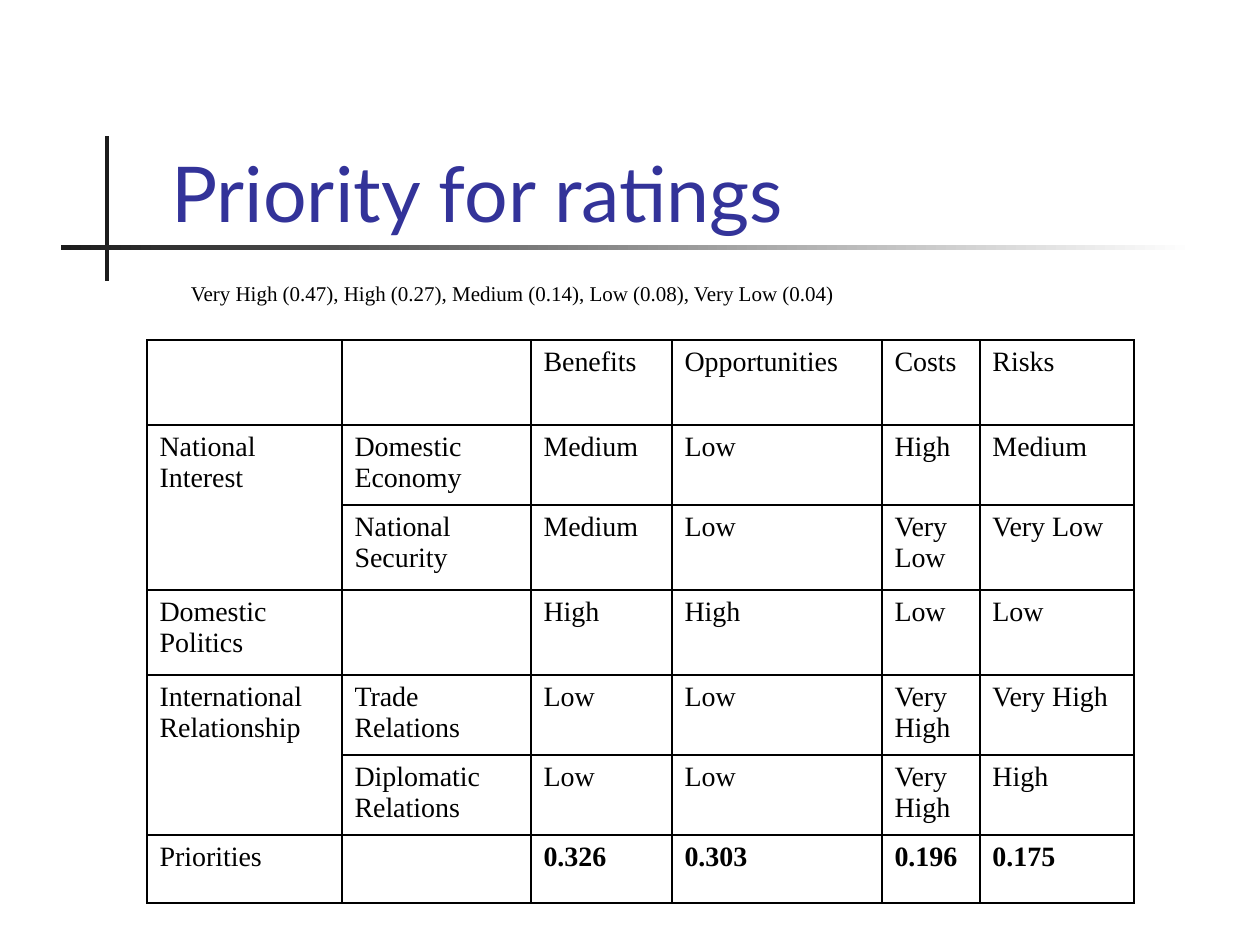
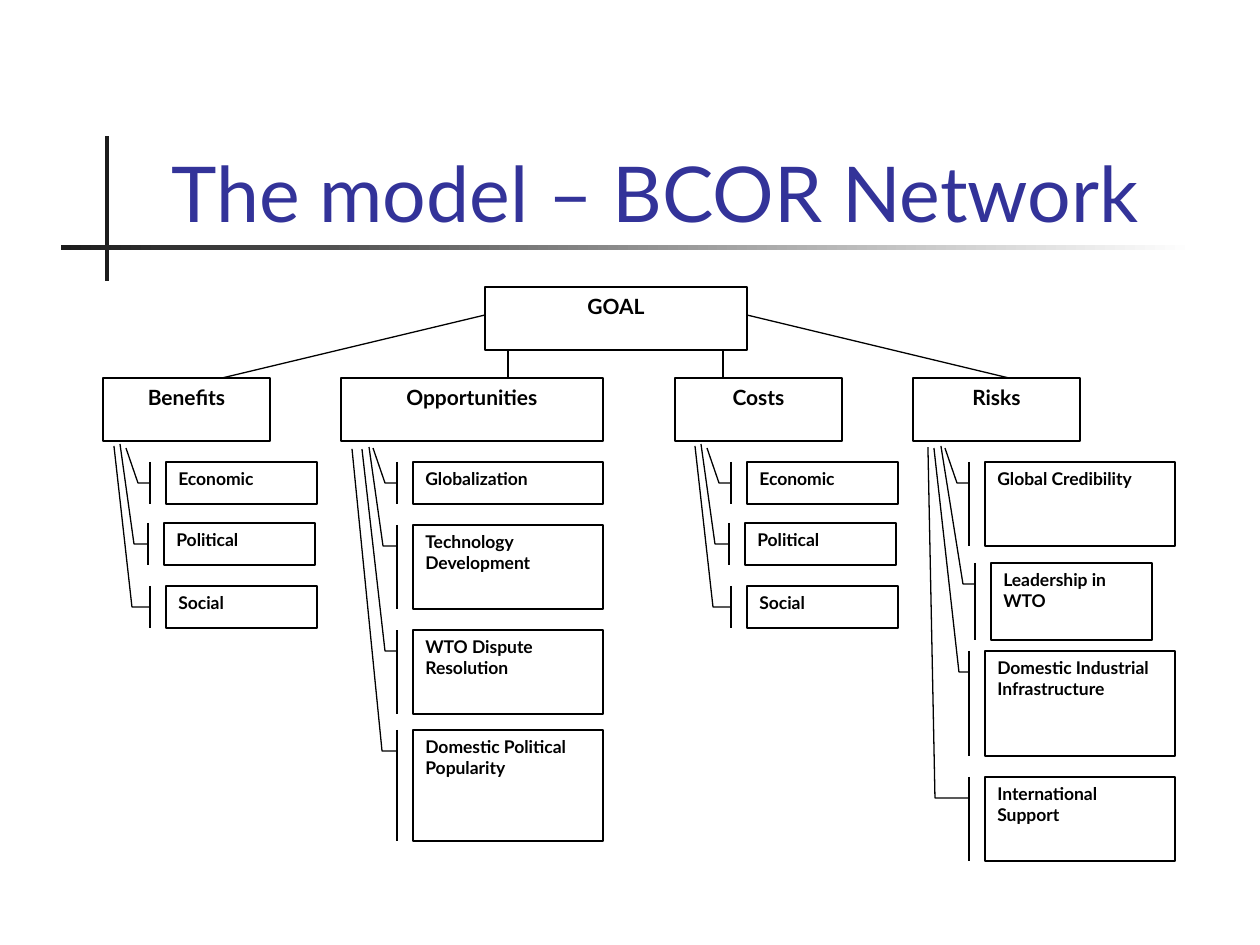
from lxml import etree
from pptx import Presentation
from pptx import util as u
from pptx.dml import color
from pptx.enum import shapes, text
from pptx.oxml import ns

COLORS = {"ink": "000000", "paper": "FFFFFF", "bar": "1C1C1C", "title": "333399"}
SANS, SERIF = "Lato", "Times New Roman"
LEFT, CENTER, JUSTIFY = text.PP_ALIGN.LEFT, text.PP_ALIGN.CENTER, text.PP_ALIGN.JUSTIFY
TOP, MIDDLE, BOTTOM = text.MSO_ANCHOR.TOP, text.MSO_ANCHOR.MIDDLE, text.MSO_ANCHOR.BOTTOM

RATINGS = [
    ["", "", "Benefits", "Opportunities", "Costs", "Risks"],
    ["National Interest", "Domestic Economy", "Medium", "Low", "High", "Medium"],
    ["", "National Security", "Medium", "Low", "Very Low", "Very Low"],
    ["Domestic Politics", "", "High", "High", "Low", "Low"],
    ["International Relationship", "Trade Relations", "Low", "Low", "Very High", "Very High"],
    ["", "Diplomatic Relations", "Low", "Low", "Very High", "High"],
    ["Priorities", "", "0.326", "0.303", "0.196", "0.175"],
]
COL_WIDTHS = [195, 189, 141, 210, 98, 154]
ROW_HEIGHTS = [85, 80, 85, 85, 80, 80, 68]

# Each factor: label, box relative to its header, bend dx, tip dx, tip dy.
SOCIETY = [
    ("Economic", (0, 84, 151, 42), -28, -40, -14),
    ("Political", (-2, 145, 151, 42), -30, -44, -79),
    ("Social", (0, 208, 151, 42), -34, -52, -140),
]
OPPORTUNITIES = [
    ("Globalization", (0, 84, 190, 42), -28, -40, -14),
    ("Technology Development", (0, 147, 190, 84), -30, -44, -78),
    ("WTO Dispute Resolution", (0, 252, 190, 84), -28, -51, -181),
    ("Domestic Political Popularity", (0, 352, 190, 111), -31, -61, -281),
]
RISKS = [
    ("Global Credibility", (0, 84, 190, 84), -28, -40, -14),
    ("Leadership in WTO", (6, 185, 161, 77), -28, -50, -117),
    ("Domestic Industrial Infrastructure", (0, 273, 190, 105), -26, -51, -203),
    ("International Support", (0, 399, 190, 84), -50, -57, -330),
]


def px(*lengths):
    """Turn px into EMU, at 126 px to the inch."""
    return [u.Emu(round(n * 914400 / 126)) for n in lengths]


def rgb(name):
    """Look up a named colour."""
    return color.RGBColor.from_string(COLORS[name])


def write(tf, words, size=12, font=SANS, ink="ink", bold=False, align=LEFT, anchor=TOP, wrap=True):
    """Put one formatted paragraph into a text frame."""
    tf.word_wrap = wrap
    tf.vertical_anchor = anchor
    p = tf.paragraphs[0]
    p.alignment = align
    r = p.add_run()
    r.text = words
    r.font.size, r.font.name, r.font.bold = u.Pt(size), font, bold
    r.font.color.rgb = rgb(ink)


def add_box(s, box, words="", kind=shapes.MSO_SHAPE.RECTANGLE, fill="paper", line="ink", **fmt):
    """Add a flat preset shape, with text if any."""
    sp = s.shapes.add_shape(kind, *px(*box))
    sp.shadow.inherit = False
    sp.fill.solid()
    sp.fill.fore_color.rgb = rgb(fill)
    if line:
        sp.line.color.rgb = rgb(line)
        sp.line.width = u.Pt(0.75)
    else:
        sp.line.fill.background()
    if words:
        write(sp.text_frame, words, **fmt)
    return sp


def add_text(s, box, words, **fmt):
    """Add a text box."""
    sp = s.shapes.add_textbox(*px(*box))
    write(sp.text_frame, words, **fmt)
    return sp


def add_line(s, x1, y1, x2, y2):
    """Add a thin straight connector."""
    c = s.shapes.add_connector(shapes.MSO_CONNECTOR.STRAIGHT, *px(x1, y1, x2, y2))
    c.line.color.rgb = rgb("ink")
    c.line.width = u.Pt(0.75)
    etree.SubElement(c._element.spPr, ns.qn("a:effectLst"))


def add_titled_slide(prs, title):
    """Add a blank slide with the crossed bars and a title."""
    s = prs.slides.add_slide(prs.slide_layouts[6])
    add_box(s, (105, 136, 4, 145), fill="bar", line=None)
    rule = add_box(s, (61, 245, 1134, 5), line=None)
    rule.fill.gradient()
    rule.fill.gradient_angle = 0
    for stop, name, position in zip(rule.fill.gradient_stops, ("bar", "paper"), (0, 1)):
        stop.color.rgb = rgb(name)
        stop.position = position
    add_text(s, (159, 86, 1074, 158), title, size=44, ink="title", anchor=BOTTOM)
    return s


def set_borders(cell, hidden=""):
    """Draw the four cell borders except the hidden sides."""
    tcPr = cell._tc.get_or_add_tcPr()
    for i, side in enumerate("LRTB"):
        ln = etree.Element(ns.qn("a:ln" + side), w=str(u.Pt(1)))
        if side in hidden:
            etree.SubElement(ln, ns.qn("a:noFill"))
        else:
            fill = etree.SubElement(ln, ns.qn("a:solidFill"))
            etree.SubElement(fill, ns.qn("a:srgbClr"), val=COLORS["ink"])
        tcPr.insert(i, ln)


def add_ratings_table(s, x, y):
    """Add the ratings table with its top left corner at x, y."""
    size = px(x, y, sum(COL_WIDTHS), sum(ROW_HEIGHTS))
    table = s.shapes.add_table(len(RATINGS), len(COL_WIDTHS), *size).table
    table.first_row = table.horz_banding = False
    for col, width in zip(table.columns, px(*COL_WIDTHS)):
        col.width = width
    for row, height in zip(table.rows, px(*ROW_HEIGHTS)):
        row.height = height
    hidden = {(1, 0): "B", (2, 0): "T"}
    for i, row in enumerate(RATINGS):
        for j, words in enumerate(row):
            cell = table.cell(i, j)
            cell.fill.background()
            set_borders(cell, hidden.get((i, j), ""))
            if words:
                bold = i == len(RATINGS) - 1 and j > 1
                write(cell.text_frame, words, size=16, font=SERIF, bold=bold, align=JUSTIFY)
    table.cell(4, 0).merge(table.cell(5, 0))


def add_factor(s, box, words, bend, tip_x, tip_y):
    """Add a factor box with an accent bar and a bent leader to its header."""
    w, h = box[2:]
    sp = add_box(s, box, words, kind=shapes.MSO_SHAPE.LINE_CALLOUT_2_BORDER_AND_ACCENT_BAR,
                 size=10, bold=True)
    leader = [(-16, 21), (bend, 21), (tip_x, tip_y)]
    for i, (dx, dy) in enumerate(leader):
        sp.adjustments[2 * i] = dy / h
        sp.adjustments[2 * i + 1] = dx / w


def add_branch(s, x, y, width, name, indent, factors):
    """Add a header at x, y and its factors below."""
    add_box(s, (x, y, width, 63), name, bold=True, align=CENTER)
    for words, (dx, dy, w, h), *leader in factors:
        add_factor(s, (x + indent + dx, y + dy, w, h), words, *leader)


def ratings_slide(prs):
    """Build the slide with the rating scale and table."""
    s = add_titled_slide(prs, "Priority for ratings")
    scale = "Very High (0.47), High (0.27), Medium (0.14), Low (0.08), Very Low (0.04)"
    sp = add_text(s, (157, 274, 711, 38), scale, font=SERIF, align=CENTER, anchor=MIDDLE, wrap=False)
    sp.text_frame.auto_size = text.MSO_AUTO_SIZE.SHAPE_TO_FIT_TEXT
    add_ratings_table(s, 147, 340)


def network_slide(prs):
    """Build the slide with the goal and its four branches."""
    s = add_titled_slide(prs, "The model – BCOR Network")
    x, y, w, h = goal = 485, 287, 262, 63
    top = 378
    for x1, y1, x2 in ((508, y + h // 2, 508), (723, y + h // 2, 723),
                       (x, 315, 222), (x + w, 315, 1009)):
        add_line(s, x1, y1, x2, top)
    add_branch(s, 103, top, 167, "Benefits", 63, SOCIETY)
    add_branch(s, 341, top, 262, "Opportunities", 72, OPPORTUNITIES)
    add_branch(s, 675, top, 167, "Costs", 72, SOCIETY)
    add_branch(s, 913, top, 167, "Risks", 72, RISKS)
    add_box(s, goal, "GOAL", bold=True, align=CENTER)


def main():
    """Build and save the presentation."""
    prs = Presentation()
    prs.slide_width, prs.slide_height = px(1260, 945)
    ratings_slide(prs)
    network_slide(prs)
    prs.save("out.pptx")


if __name__ == "__main__":
    main()
